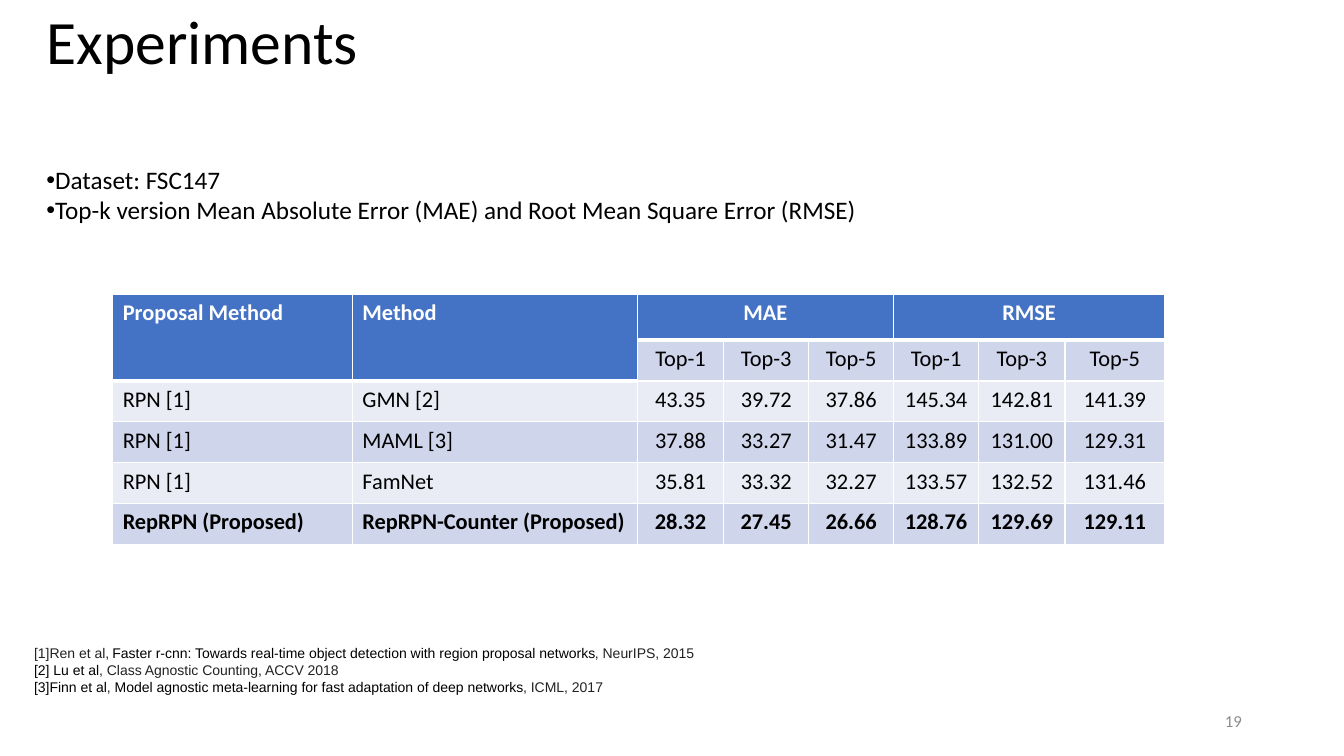
import pptx
import pptx.util
import pptx.dml.color
import pptx.enum.text
import pptx.oxml.ns
import lxml.etree
from dataclasses import dataclass

Cm, Pt = pptx.util.Cm, pptx.util.Pt
ALIGN = pptx.enum.text.PP_ALIGN
ANCHOR = pptx.enum.text.MSO_ANCHOR

TITLE = "Experiments"
BULLETS = [
    "Dataset: FSC147",
    "Top-k version Mean Absolute Error (MAE) and Root Mean Square Error (RMSE)",
]
HEADERS = [
    ("Proposal Method", 0, 2, 1),
    ("Method", 1, 2, 1),
    ("MAE", 2, 1, 3),
    ("RMSE", 5, 1, 3),
]
RANKS = ["Top-1", "Top-3", "Top-5"]
RESULTS = [
    ["RPN [1]", "GMN [2]", "43.35", "39.72", "37.86", "145.34", "142.81", "141.39"],
    ["RPN [1]", "MAML [3]", "37.88", "33.27", "31.47", "133.89", "131.00", "129.31"],
    ["RPN [1]", "FamNet", "35.81", "33.32", "32.27", "133.57", "132.52", "131.46"],
    ["RepRPN (Proposed)", "RepRPN-Counter (Proposed)",
     "28.32", "27.45", "26.66", "128.76", "129.69", "129.11"],
]
REFERENCES = [
    [("[1]Ren et al,", "soft"), (" ", "text"),
     ("Faster r-cnn: Towards real-time object detection with region proposal networks", "text"),
     (", NeurIPS, 2015", "soft")],
    [("[2] Lu et al", "text"), (", Class Agnostic Counting, ACCV 2018", "soft")],
    [("[3]Finn et al", "text"), (",", "soft"),
     (" Model agnostic meta-learning for fast adaptation of deep networks", "text"),
     (", ICML, 2017", "soft")],
]
PAGE = "19"
COLUMN_WIDTHS = [6.04, 7.18, 2.18, 2.14, 2.14, 2.14, 2.18, 2.51]
HEADER_HEIGHT, ROW_HEIGHT = 1.15, 1.03


@dataclass(frozen=True)
class Theme:
    font: str = "Calibri"
    reference_font: str = "Arial"
    text: str = "000000"
    soft: str = "222222"
    muted: str = "8C8C8C"
    white: str = "FFFFFF"
    header: str = "4472C4"
    bands: tuple = ("CFD5EA", "E9EBF5")
    title_size: int = 44
    body_size: int = 18
    table_size: int = 16
    page_size: int = 12
    reference_size: int = 10


theme = Theme()


def add_run(p, text, size, color=theme.text, bold=False, font=theme.font):
    r = p.add_run()
    r.text = text
    r.font.name, r.font.size, r.font.bold = font, Pt(size), bold
    r.font.color.rgb = pptx.dml.color.RGBColor.from_string(color)


def place(sp, left, top, width, height):
    sp.left, sp.top, sp.width, sp.height = Cm(left), Cm(top), Cm(width), Cm(height)


def set_frame(tf, anchor, left, top, right, bottom):
    tf.word_wrap = True
    tf.auto_size = pptx.enum.text.MSO_AUTO_SIZE.NONE
    tf.vertical_anchor = anchor
    tf.margin_left, tf.margin_top = Cm(left), Cm(top)
    tf.margin_right, tf.margin_bottom = Cm(right), Cm(bottom)


def paragraphs(tf, count):
    return [tf.paragraphs[0]] + [tf.add_paragraph() for _ in range(count - 1)]


def add_child(parent, tag, **attributes):
    return lxml.etree.SubElement(parent, pptx.oxml.ns.qn(tag), attributes)


def style_cell(cell, fill, bottom_width):
    tcPr = cell._tc.get_or_add_tcPr()
    for side, width in (("L", 1), ("R", 1), ("T", 1), ("B", bottom_width)):
        line = add_child(tcPr, f"a:ln{side}", w=str(Pt(width)))
        add_child(add_child(line, "a:solidFill"), "a:srgbClr", val=theme.white)
    cell.fill.solid()
    cell.fill.fore_color.rgb = pptx.dml.color.RGBColor.from_string(fill)


def write_cell(cell, text, col, color=theme.text, bold=False):
    p = cell.text_frame.paragraphs[0]
    p.alignment = ALIGN.LEFT if col < 2 else ALIGN.CENTER
    add_run(p, text, theme.table_size, color, bold)


def add_title(s):
    sp = s.shapes.title
    place(sp, 1.17, -0.48, 30.48, 3.18)
    set_frame(sp.text_frame, ANCHOR.MIDDLE, 0, 0.13, 0.25, 0.13)
    p = sp.text_frame.paragraphs[0]
    p.alignment, p.line_spacing = ALIGN.LEFT, 0.9
    add_run(p, TITLE, theme.title_size)


def add_bullets(s):
    sp = s.placeholders[1]
    place(sp, 1.17, 4.14, 20.93, 1.55)
    set_frame(sp.text_frame, ANCHOR.TOP, 0, 0, 0, 0)
    for p, text in zip(paragraphs(sp.text_frame, len(BULLETS)), BULLETS):
        p.space_before = Pt(0)
        pPr = p._p.get_or_add_pPr()
        pPr.set("marL", "0")
        pPr.set("indent", str(Cm(-0.5)))
        add_child(pPr, "a:buChar", char="•")
        add_run(p, text, theme.body_size)


def add_results(s):
    heights = [HEADER_HEIGHT] + [ROW_HEIGHT] * (len(RESULTS) + 1)
    table = s.shapes.add_table(
        len(heights), len(COLUMN_WIDTHS), Cm(2.84), Cm(7.42),
        Cm(sum(COLUMN_WIDTHS)), Cm(sum(heights))).table
    for column, width in zip(table.columns, COLUMN_WIDTHS):
        column.width = Cm(width)
    for row, height in zip(table.rows, heights):
        row.height = Cm(height)
    for i in range(len(heights)):
        for col in range(len(COLUMN_WIDTHS)):
            is_header = i == 0 or (i == 1 and col < 2)
            fill = theme.header if is_header else theme.bands[(i + 1) % 2]
            style_cell(table.cell(i, col), fill, 3 if is_header else 1)
    for text, col, rows, cols in HEADERS:
        cell = table.cell(0, col)
        cell.merge(table.cell(rows - 1, col + cols - 1))
        write_cell(cell, text, col, theme.white, True)
    for col, text in enumerate(RANKS * 2, start=2):
        write_cell(table.cell(1, col), text, col)
    for i, values in enumerate(RESULTS, start=2):
        for col, text in enumerate(values):
            write_cell(table.cell(i, col), text, col, bold=values is RESULTS[-1])


def add_references(s):
    sp = s.shapes.add_textbox(Cm(0.53), Cm(16.05), Cm(32.99), Cm(2.77))
    set_frame(sp.text_frame, ANCHOR.TOP, 0.33, 0.19, 0.33, 0.33)
    for p, parts in zip(paragraphs(sp.text_frame, len(REFERENCES)), REFERENCES):
        for text, tone in parts:
            font = theme.font if text == " " else theme.reference_font
            add_run(p, text, theme.reference_size, getattr(theme, tone), font=font)


def add_page_number(s):
    sp = s.shapes.add_textbox(Cm(23.93), Cm(17.65), Cm(7.62), Cm(1.02))
    set_frame(sp.text_frame, ANCHOR.MIDDLE, 0.25, 0.13, 0.25, 0.13)
    p = sp.text_frame.paragraphs[0]
    p.alignment = ALIGN.RIGHT
    add_run(p, PAGE, theme.page_size, theme.muted)


def main():
    prs = pptx.Presentation()
    prs.slide_width, prs.slide_height = Cm(33.87), Cm(19.05)
    s = prs.slides.add_slide(prs.slide_layouts[1])
    add_title(s)
    add_bullets(s)
    add_results(s)
    add_references(s)
    add_page_number(s)
    prs.save("out.pptx")


if __name__ == "__main__":
    main()
